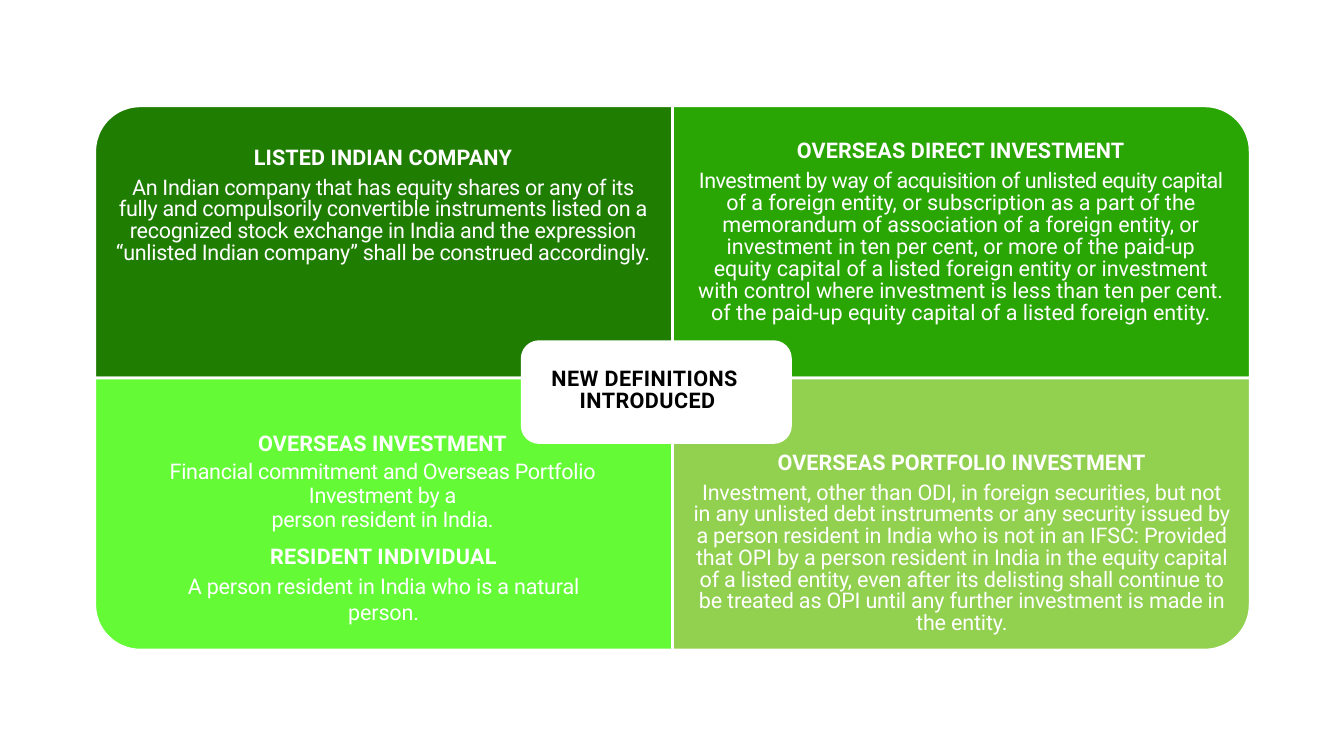
import pptx
import pptx.dml.color
import pptx.enum.shapes
import pptx.enum.text
import pptx.util
from pptx.util import Inches, Pt

WHITE, BLACK = "FFFFFF", "000000"
CENTER = pptx.enum.text.PP_ALIGN.CENTER
LEFT = pptx.enum.text.PP_ALIGN.LEFT
SHAPES = pptx.enum.shapes.MSO_SHAPE

PANEL_LEFT, PANEL_TOP = 0.94, 1.05
QUADRANT_WIDTH, QUADRANT_HEIGHT = 5.73, 2.7
QUADRANT_COLOURS = [["1F7D02", "29A603"], ["64FB36", "92D050"]]
HUB_BOX = (5.18, 3.39, 2.66, 1)

# Each definition: box, then paragraphs of
# (runs of (text, letter spacing), bold, space before, line spacing)
DEFINITIONS = [
    ((1.12, 1.37, 5.36, 1.28), [
        ([("LISTED INDIAN COMPANY", 0.1)], True, 4.2, 1.0),
        ([("An Indian company that has equity shares or any of its fully and "
           "compulsorily convertible instruments listed on a recognized stock "
           "exchange in India and the expression “unlisted Indian company” "
           "shall be construed accordingly.", -0.2)], False, 5.6, 0.84),
    ]),
    ((6.92, 1.3, 5.22, 1.75), [
        ([("OVERSEAS DIRECT INVESTMENT", 0.1)], True, 4.2, 1.0),
        ([("Investment by way of acquisition of unlisted equity capital ", -0.35),
          ("of a foreign entity, or subscription as a part of the memorandum "
           "of association of a foreign entity, or investment in ten per cent, "
           "or more of the paid-up equity capital of a listed foreign entity "
           "or investment with control where investment is less than ten per "
           "cent. of the paid-up equity capital of a listed foreign entity.",
           0)], False, 5.4, Pt(15.7)),
    ]),
    ((1.17, 4.21, 5.25, 0.84), [
        ([("OVERSEAS INVESTMENT", 0.1)], True, 4.2, 1.0),
        ([("Financial commitment and Overseas Portfolio Investment by a", -0.2)],
         False, 2.6, Pt(17.1)),
        ([("person resident in India.", -0.2)], False, 0, Pt(17.1)),
    ]),
    ((1.69, 5.33, 4.23, 0.62), [
        ([("RESIDENT INDIVIDUAL", 0.25)], True, 4.1, 1.0),
        ([("A person resident in India who is a natural person.", -0.1)],
         False, 2.6, 1.0),
    ]),
    ((6.87, 4.39, 5.34, 1.72), [
        ([("OVERSEAS PORTFOLIO INVESTMENT", 0.05)], True, 4.1, 1.0),
        ([("Investment, other than ODI, in foreign securities, but not in any "
           "unlisted debt instruments or any security issued by a person "
           "resident in India who is not in an IFSC: Provided that OPI by a "
           "person resident in India in the equity capital of a listed entity, "
           "even after its delisting shall continue to be treated as OPI until "
           "any further investment is made in the entity.", -0.1)],
         False, 6, 0.84),
    ]),
]
HUB_TITLE = ((5.46, 3.6, 2.1, 0.51), [
    ([("NEW DEFINITIONS INTRODUCED", 0.35)], True, 3.9, Pt(15.7)),
])


def colour(hex_value):
    return pptx.dml.color.RGBColor.from_string(hex_value)


def set_all(target, values):
    for name, value in values.items():
        setattr(target, name, value)


def add_block(slide, kind, box, fill):
    block = slide.shapes.add_shape(kind, *map(Inches, box))
    block.shadow.inherit = False
    block.fill.solid()
    block.fill.fore_color.rgb = colour(fill)
    block.line.color.rgb = colour(WHITE)
    block.line.width = Pt(2)
    return block


def add_text(slide, box, paragraphs, ink, align):
    frame = slide.shapes.add_textbox(*map(Inches, box)).text_frame
    set_all(frame, dict(word_wrap=True, margin_left=0, margin_right=0,
                        margin_top=Inches(0.06), margin_bottom=0))
    for index, (runs, bold, before, spacing) in enumerate(paragraphs):
        paragraph = frame.add_paragraph() if index else frame.paragraphs[0]
        set_all(paragraph, dict(alignment=align, space_before=Pt(before),
                                line_spacing=spacing))
        for text, tracking in runs:
            run = paragraph.add_run()
            run.text = text
            set_all(run.font, dict(name="Roboto", size=Pt(15.4), bold=bold))
            run.font.color.rgb = colour(ink)
            run.font._element.set("spc", str(round(tracking * 100)))
    return frame


def main():
    deck = pptx.Presentation()
    set_all(deck, dict(slide_width=Inches(13.33), slide_height=Inches(7.5)))
    slide = deck.slides.add_slide(deck.slide_layouts[6])

    for row, row_colours in enumerate(QUADRANT_COLOURS):
        for column, fill in enumerate(row_colours):
            box = (PANEL_LEFT + column * QUADRANT_WIDTH,
                   PANEL_TOP + row * QUADRANT_HEIGHT,
                   QUADRANT_WIDTH, QUADRANT_HEIGHT)
            quadrant = add_block(slide, SHAPES.ROUND_1_RECTANGLE, box, fill)
            # The preset rounds its top right corner; flip it to face outwards
            frame = quadrant.element.spPr.xfrm
            frame.set("flipH", str(1 - column))
            frame.set("flipV", str(row))

    for box, paragraphs in DEFINITIONS:
        add_text(slide, box, paragraphs, WHITE, CENTER)

    add_block(slide, SHAPES.ROUNDED_RECTANGLE, HUB_BOX, WHITE)
    title = add_text(slide, *HUB_TITLE, BLACK, LEFT)
    properties = title.paragraphs[0]._p.get_or_add_pPr()
    properties.set("marL", str(Inches(0.29)))
    properties.set("indent", str(Inches(-0.28)))

    deck.save("out.pptx")


if __name__ == "__main__":
    main()
